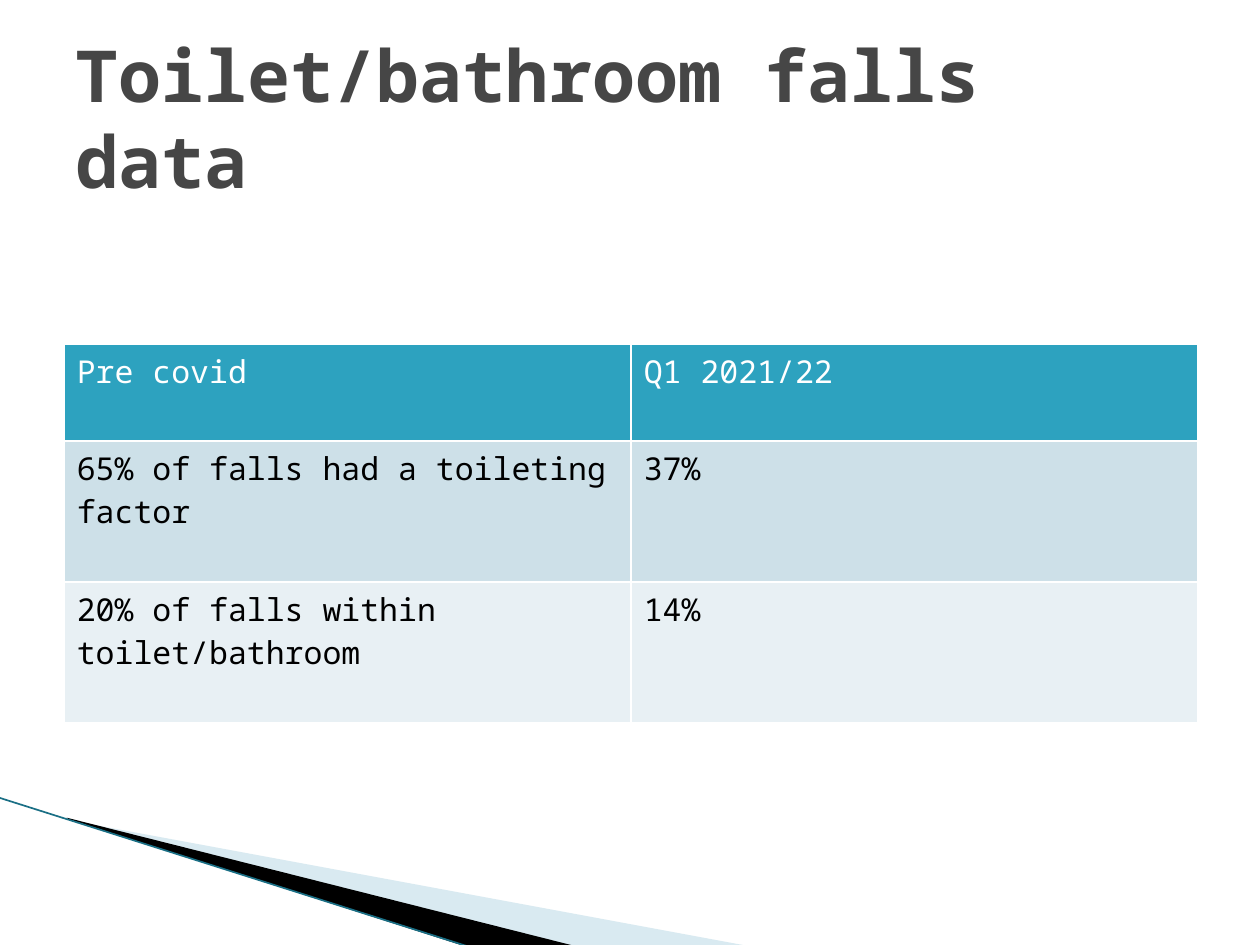
from lxml.etree import SubElement
from pptx import Presentation
from pptx.dml.color import RGBColor as RGB
from pptx.enum.shapes import MSO_CONNECTOR as Connector
from pptx.enum.text import MSO_ANCHOR as Anchor, MSO_AUTO_SIZE as AutoSize, PP_ALIGN as Align
from pptx.oxml.ns import qn
from pptx.util import Inches, Pt

# Content
TITLE = "Toilet/bathroom falls data"
ROWS = [
    ("Pre covid", "Q1 2021/22"),
    ("65% of falls had a toileting factor", "37%"),
    ("20% of falls within toilet/bathroom", "14%"),
]
ROW_HEIGHTS = (0.77, 1.12, 1.12)
COLUMN_WIDTH = 4.5

THEME = {
    "font": "Noto Sans Mono", "title_size": 41, "table_size": 18,
    "title": "464646", "header_text": "FFFFFF", "body_text": "000000",
    "row_fills": ("2DA2BF", "CDE0E8", "E8F0F4"),
    "pale_wedge": "A0CBDC", "dark_wedge": "000000", "edge": "1A6F85",
}

# Decorative wedges: colour key, opacity in percent and corners in inches
WEDGES = [
    ("pale_wedge", 40, [(0.55, 6.51), (5.95, 7.51), (4.56, 7.51), (0.55, 6.5)]),
    ("dark_wedge", 100, [(0.53, 6.49), (4.57, 7.51), (3.72, 7.52), (0.54, 6.5)]),
]
EDGE = (-0.01, 6.33, 3.71, 7.51)


def add_run(paragraph, text, size, color, bold=False):
    run = paragraph.add_run()
    run.text = text
    run.font.name = THEME["font"]
    run.font.size = Pt(size)
    run.font.bold = bold
    run.font.color.rgb = RGB.from_string(color)


def add_wedge(slide, color_key, opacity, corners):
    points = [(Inches(x), Inches(y)) for x, y in corners]
    builder = slide.shapes.build_freeform(*points[0])
    builder.add_line_segments(points[1:], close=True)
    shape = builder.convert_to_shape()
    shape.shadow.inherit = False
    shape.fill.solid()
    shape.fill.fore_color.rgb = RGB.from_string(THEME[color_key])
    shape.line.fill.background()
    if opacity < 100:
        color = shape._element.spPr.find(qn("a:solidFill")).find(qn("a:srgbClr"))
        SubElement(color, qn("a:alpha")).set("val", str(opacity * 1000))


def add_edge(slide):
    line = slide.shapes.add_connector(Connector.STRAIGHT, *map(Inches, EDGE))
    line.line.color.rgb = RGB.from_string(THEME["edge"])
    line.line.width = Pt(0.95)
    SubElement(line._element.spPr, qn("a:effectLst"))


def add_falls_table(slide):
    columns = len(ROWS[0])
    table = slide.shapes.add_table(
        len(ROWS), columns, Inches(0.51), Inches(2.73),
        Inches(COLUMN_WIDTH * columns), Inches(sum(ROW_HEIGHTS))).table
    for column in table.columns:
        column.width = Inches(COLUMN_WIDTH)
    for index, texts in enumerate(ROWS):
        table.rows[index].height = Inches(ROW_HEIGHTS[index])
        color = THEME["body_text" if index else "header_text"]
        for cell, text in zip(table.rows[index].cells, texts):
            cell.fill.solid()
            cell.fill.fore_color.rgb = RGB.from_string(THEME["row_fills"][index])
            add_run(cell.text_frame.paragraphs[0], text, THEME["table_size"], color)


def format_title(slide):
    title = slide.shapes.title
    title.left, title.top, title.width, title.height = map(Inches, (0.5, 0.3, 9, 1.25))
    frame = title.text_frame
    frame.word_wrap = True
    frame.auto_size = AutoSize.NONE
    frame.vertical_anchor = Anchor.MIDDLE
    paragraph = frame.paragraphs[0]
    paragraph.alignment = Align.LEFT
    add_run(paragraph, TITLE, THEME["title_size"], THEME["title"], bold=True)


def main():
    presentation = Presentation()
    presentation.slide_width, presentation.slide_height = Inches(10), Inches(7.5)
    slide = presentation.slides.add_slide(presentation.slide_layouts[5])
    for color_key, opacity, corners in WEDGES:
        add_wedge(slide, color_key, opacity, corners)
    add_edge(slide)
    add_falls_table(slide)
    format_title(slide)
    presentation.save("out.pptx")


if __name__ == "__main__":
    main()
